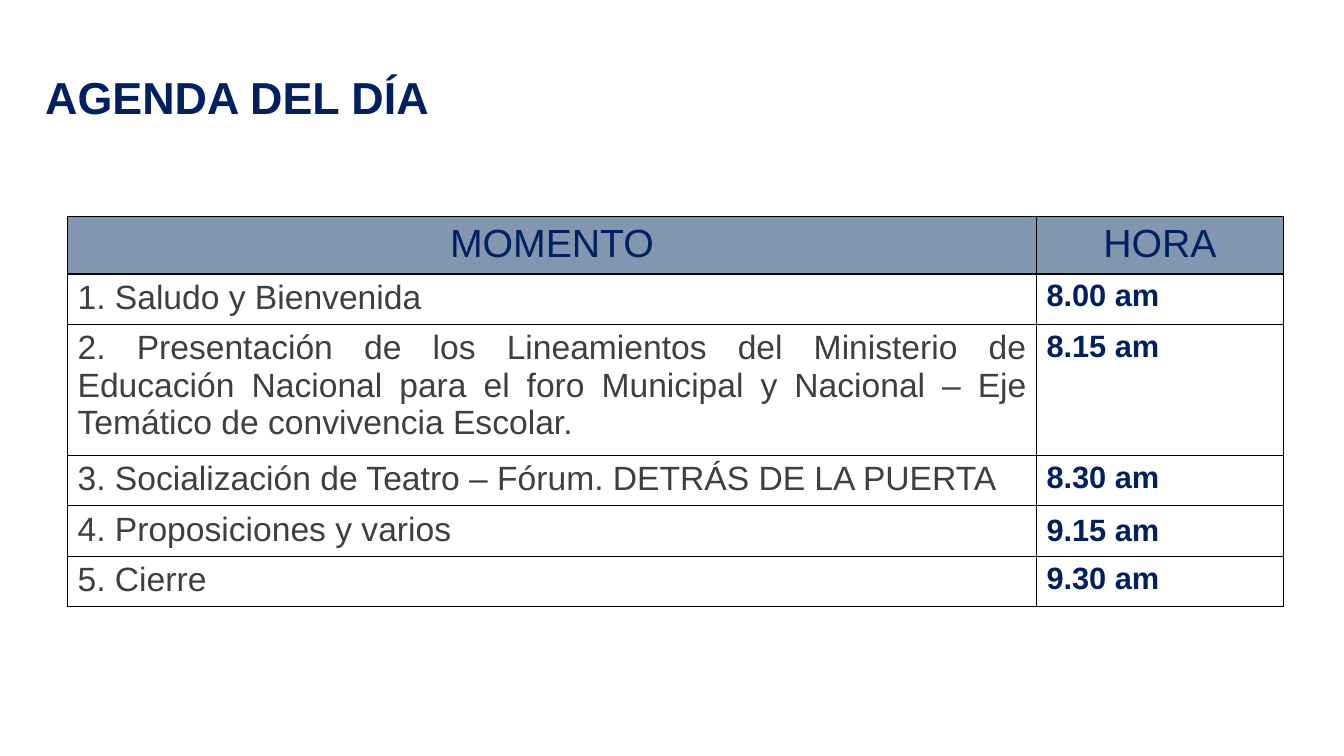
from dataclasses import dataclass

from lxml import etree
from pptx import Presentation
from pptx import util as u
from pptx.dml.color import RGBColor
from pptx.enum import text
from pptx.oxml import ns

TITLE = "AGENDA DEL DÍA"
HEADER = ("MOMENTO", "HORA")
AGENDA = [
    ("1. Saludo y Bienvenida", "8.00 am"),
    ("2. Presentación de los Lineamientos del Ministerio de Educación Nacional "
     "para el foro Municipal y Nacional – Eje Temático de convivencia Escolar.", "8.15 am"),
    ("3. Socialización de Teatro – Fórum. DETRÁS DE LA PUERTA", "8.30 am"),
    ("4. Proposiciones y varios", "9.15 am"),
    ("5. Cierre", "9.30 am"),
]
JUSTIFIED_ROW = 2
MIDDLE_TIME_ROW = 4
COLUMN_WIDTHS = (9.61, 2.45)
HEADER_HEIGHT, LINE_HEIGHT = 0.53, 0.47
JUSTIFIED_HEIGHT = 1.21


@dataclass(frozen=True)
class Theme:
    font: str = "Arial"
    navy: str = "002060"
    grey: str = "3F3F3F"
    header_fill: str = "8296B0"
    border: str = "000000"
    title_size: int = 32
    header_size: int = 28
    moment_size: int = 24
    time_size: int = 22


THEME = Theme()


def style(paragraph, size, color, bold=False, align=text.PP_ALIGN.LEFT):
    paragraph.alignment = align
    for run in paragraph.runs:
        run.font.name = THEME.font
        run.font.size = u.Pt(size)
        run.font.bold = bold
        run.font.color.rgb = RGBColor.from_string(color)


def add_borders(cell):
    """Draw a thin line on all four sides; borders must precede the fill."""
    properties = cell._tc.get_or_add_tcPr()
    for index, side in enumerate(("lnL", "lnR", "lnT", "lnB")):
        line = etree.Element(ns.qn(f"a:{side}"), w=str(u.Pt(1)))
        fill = etree.SubElement(line, ns.qn("a:solidFill"))
        etree.SubElement(fill, ns.qn("a:srgbClr"), val=THEME.border)
        properties.insert(index, line)


def add_title(slide):
    box = slide.shapes.add_textbox(u.Inches(0.35), u.Inches(0.74), u.Inches(11.5), u.Inches(0.51))
    frame = box.text_frame
    frame.word_wrap = True
    frame.vertical_anchor = text.MSO_ANCHOR.MIDDLE
    frame.text = TITLE
    frame.paragraphs[0].line_spacing = 0.9
    style(frame.paragraphs[0], THEME.title_size, THEME.navy, bold=True)


def add_agenda(slide):
    rows = [HEADER, *AGENDA]
    heights = [HEADER_HEIGHT] + [LINE_HEIGHT] * len(AGENDA)
    heights[JUSTIFIED_ROW] = JUSTIFIED_HEIGHT
    table = slide.shapes.add_table(
        len(rows), len(HEADER), u.Inches(0.67), u.Inches(2.15),
        u.Inches(sum(COLUMN_WIDTHS)), u.Inches(sum(heights))).table
    table.horz_banding = False
    for column, width in zip(table.columns, COLUMN_WIDTHS):
        column.width = u.Inches(width)
    for row, height in zip(table.rows, heights):
        row.height = u.Inches(height)

    for row_index, row in enumerate(rows):
        for column_index, words in enumerate(row):
            cell = table.cell(row_index, column_index)
            cell.text = words
            paragraph = cell.text_frame.paragraphs[0]
            if row_index == 0:
                cell.fill.solid()
                cell.fill.fore_color.rgb = RGBColor.from_string(THEME.header_fill)
                style(paragraph, THEME.header_size, THEME.navy, align=text.PP_ALIGN.CENTER)
            else:
                cell.fill.background()
                if column_index == 0:
                    justified = row_index == JUSTIFIED_ROW
                    style(paragraph, THEME.moment_size, THEME.grey,
                          align=text.PP_ALIGN.JUSTIFY if justified else text.PP_ALIGN.LEFT)
                else:
                    style(paragraph, THEME.time_size, THEME.navy, bold=True)
            add_borders(cell)
    table.cell(MIDDLE_TIME_ROW, 1).vertical_anchor = text.MSO_ANCHOR.MIDDLE


def main():
    presentation = Presentation()
    presentation.slide_width = u.Inches(13.33)
    presentation.slide_height = u.Inches(7.5)
    slide = presentation.slides.add_slide(presentation.slide_layouts[6])
    add_title(slide)
    add_agenda(slide)
    presentation.save("out.pptx")


if __name__ == "__main__":
    main()
